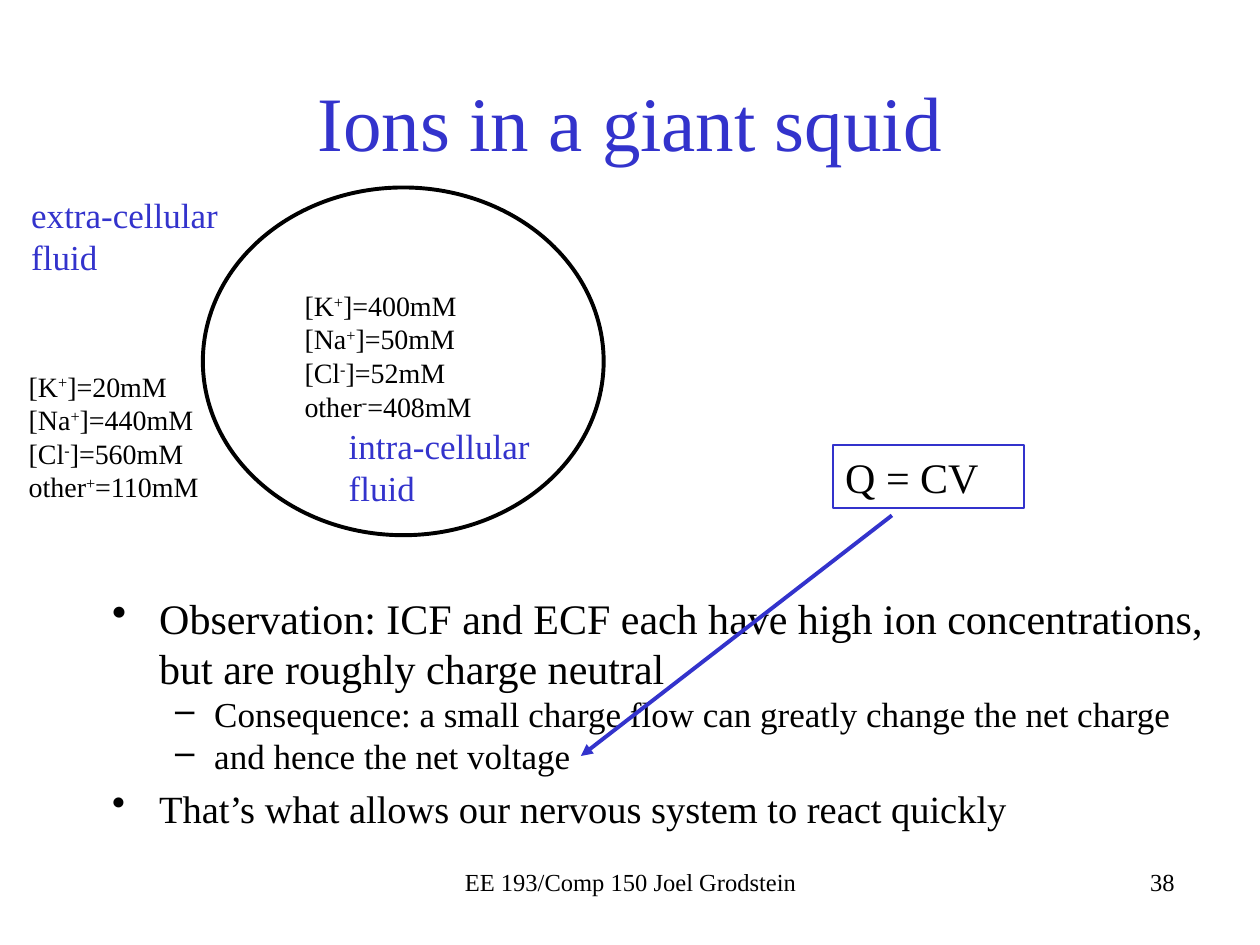
from dataclasses import dataclass

from lxml import etree
from pptx import Presentation
from pptx import util as u
from pptx.dml.color import RGBColor
from pptx.enum import shapes, text
from pptx.oxml.ns import qn


@dataclass(frozen=True)
class Theme:
    font: str = "Times New Roman"
    ink: RGBColor = RGBColor(0, 0, 0)
    accent: RGBColor = RGBColor(0x33, 0x33, 0xCC)
    title: float = 44
    body: float = 24
    closing: float = 22
    label: float = 20
    ions: float = 16
    footer: float = 14
    rule: float = 2.25
    frame: float = 1


THEME = Theme()
ALIGN = text.PP_ALIGN


def style(p, size, color=THEME.ink, align=ALIGN.LEFT):
    p.alignment = align
    p.font.name = THEME.font
    p.font.size = u.Pt(size)
    p.font.color.rgb = color


def add_text(s, box, content, size, color=THEME.ink, align=ALIGN.LEFT):
    sp = s.shapes.add_textbox(*map(u.Cm, box))
    tf = sp.text_frame
    tf.word_wrap = True
    p = tf.paragraphs[0]
    p.text = content
    style(p, size, color, align)
    return sp


def add_outline(s, kind, box, color, width):
    sp = s.shapes.add_shape(kind, *map(u.Cm, box))
    sp.shadow.inherit = False
    sp.fill.background()
    sp.line.color.rgb = color
    sp.line.width = u.Pt(width)
    return sp


def add_ions(s, box, ions):
    tf = add_text(s, box, "", THEME.ions).text_frame
    for i, (name, charge, amount) in enumerate(ions):
        p = tf.paragraphs[0] if i == 0 else tf.add_paragraph()
        style(p, THEME.ions)
        for part in (name, charge, amount):
            r = p.add_run()
            r.text = part
            if part == charge:
                r.font._element.set("baseline", "30000")


def add_title(s, box):
    sp = add_text(s, box, "Ions in a giant squid", THEME.title, THEME.accent, ALIGN.CENTER)
    sp.text_frame.vertical_anchor = text.MSO_ANCHOR.MIDDLE


def add_cell(s, box):
    x, y, w, h = box
    add_outline(s, shapes.MSO_SHAPE.OVAL, (x + w - 8.08, y, 8.08, h), THEME.ink, THEME.rule)
    add_ions(s, (x + 5.56, y + 1.91, 3.94, 3), [
        ("[K", "+", "]=400mM"), ("[Na", "+", "]=50mM"),
        ("[Cl", "-", "]=52mM"), ("other", "-", "=408mM")])
    add_ions(s, (x, y + 3.54, 4.11, 3), [
        ("[K", "+", "]=20mM"), ("[Na", "+", "]=440mM"),
        ("[Cl", "-", "]=560mM"), ("other", "+", "=110mM")])
    add_text(s, (x + 6.45, y + 4.65, 4.22, 1.96), "intra-cellular fluid", THEME.label, THEME.accent)
    add_text(s, (x + 0.05, y, 4.55, 1.96), "extra-cellular fluid", THEME.label, THEME.accent)


def add_bullets(s, box):
    top = ("•", 0.95, -0.95)
    sub = ("–", 2.06, -0.79)
    items = [
        ("Observation: ICF and ECF each have high ion concentrations, "
         "but are roughly charge neutral", top, THEME.body),
        ("Consequence: a small charge flow can greatly change the net charge", sub, THEME.label),
        ("and hence the net voltage", sub, THEME.label),
        ("That’s what allows our nervous system to react quickly", top, THEME.closing),
    ]
    tf = add_text(s, box, "", THEME.body).text_frame
    for i, (content, level, size) in enumerate(items):
        mark, margin, indent = level
        p = tf.paragraphs[0] if i == 0 else tf.add_paragraph()
        p.text = content
        p.level = 0 if level is top else 1
        p.space_before = u.Pt(size * 0.2 if level is top else 0)
        pPr = p._p.get_or_add_pPr()
        pPr.set("marL", str(u.Cm(margin)))
        pPr.set("indent", str(u.Cm(indent)))
        bullet = etree.Element(qn("a:buChar"), char=mark)
        spacing = pPr.find(qn("a:spcBef"))
        spacing.addnext(bullet)
        style(p, size)


def add_formula(s, box):
    x, y, w, h = box
    sp = add_outline(s, shapes.MSO_SHAPE.RECTANGLE, box, THEME.accent, THEME.frame)
    tf = sp.text_frame
    tf.word_wrap = True
    tf.vertical_anchor = text.MSO_ANCHOR.TOP
    p = tf.paragraphs[0]
    p.text = "Q = CV"
    style(p, THEME.body)

    ends = (x + 1.19, y + h + 0.15, x - 5.08, y + h + 5)
    arrow = s.shapes.add_connector(shapes.MSO_CONNECTOR.STRAIGHT, *map(u.Cm, ends))
    arrow.line.color.rgb = THEME.accent
    arrow.line.width = u.Pt(THEME.rule)
    etree.SubElement(arrow.line._get_or_add_ln(), qn("a:tailEnd"), type="triangle")
    etree.SubElement(arrow._element.spPr, qn("a:effectLst"))


def add_footer(s, box):
    x, y, w, h = box
    add_text(s, (x, y, 8.05, h), "EE 193/Comp 150 Joel Grodstein", THEME.footer, align=ALIGN.CENTER)
    add_text(s, (x + w - 8.05, y, 8.05, h), "38", THEME.footer, align=ALIGN.RIGHT)


def main():
    prs = Presentation()
    prs.slide_width, prs.slide_height = u.Cm(25.4), u.Cm(19.05)
    s = prs.slides.add_slide(prs.slide_layouts[6])
    add_title(s, (1.91, 0.84, 21.59, 3.18))
    add_bullets(s, (2.01, 11.81, 22.89, 5.49))
    add_footer(s, (8.69, 17.35, 15.24, 0.86))
    add_cell(s, (0.33, 3.78, 11.84, 7.01))
    add_formula(s, (16.79, 8.97, 3.86, 1.27))
    prs.save("out.pptx")


if __name__ == "__main__":
    main()
